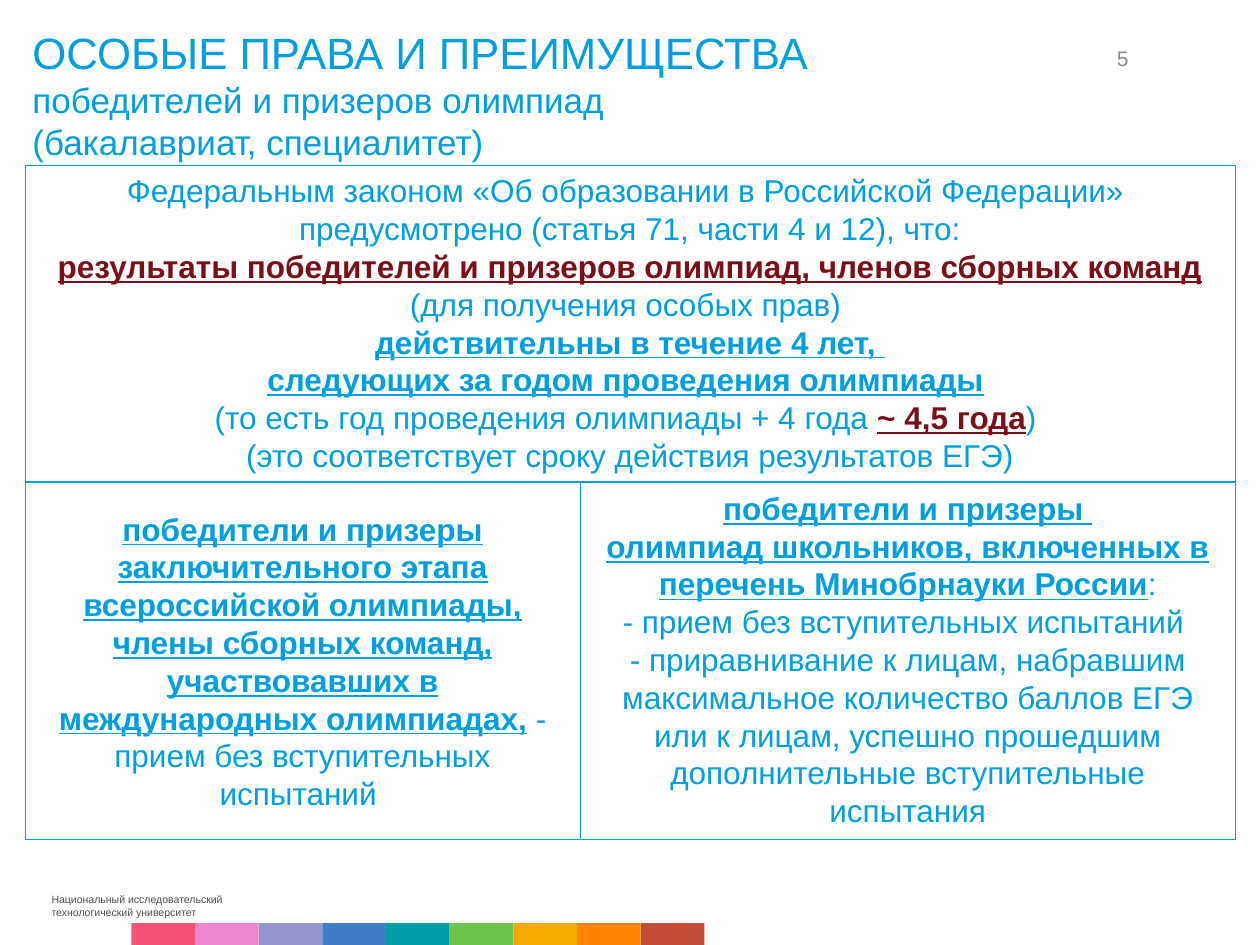
from pptx import Presentation
from pptx.dml.color import RGBColor as Rgb
from pptx.enum.shapes import MSO_SHAPE as Form
from pptx.enum.text import MSO_ANCHOR as Anchor, MSO_AUTO_SIZE as Auto, PP_ALIGN as Align
from pptx.util import Cm, Pt

HUES = {"blue": "009FDF", "wine": "7B0F19", "gray": "898989", "dark": "4C4C4C", "white": "FFFFFF"}
BANDS = ["F65275", "EC86D0", "9595D2", "407EC9", "009CA6", "6CC24A", "F2A900", "FF8200", "C04C36"]
TITLE = [("ОСОБЫЕ ПРАВА И ПРЕИМУЩЕСТВА", 25), ("победителей и призеров олимпиад", 20),
         ("(бакалавриат, специалитет)", 20)]
FOOTER = ["Национальный исследовательский", "технологический университет"]
KEY = {"bold": True, "underline": True}
WINE = {**KEY, "hue": "wine"}
LAW = [
    [("Федеральным законом «Об образовании в Российской Федерации» ", {})],
    [("предусмотрено (статья 71, части 4 и 12), что:", {})],
    [("результаты победителей и призеров олимпиад, членов сборных команд ", WINE),
     ("(для получения особых прав) ", {})],
    [("действительны в течение 4 лет, ", KEY)],
    [("следующих за годом проведения олимпиады", KEY), (" ", {})],
    [("(то есть год проведения олимпиады + 4 года ", {}), ("~ 4,5 года", WINE), (") ", {})],
    [("(это соответствует сроку действия результатов ЕГЭ)", {})],
]
FINAL = [
    [("победители и призеры заключительного этапа всероссийской олимпиады, члены сборных команд, "
      "участвовавших в международных олимпиадах,", KEY),
     (" - прием без вступительных испытаний ", {})],
]
SCHOOL = [
    [("победители и призеры ", KEY)],
    [("олимпиад школьников, включенных в перечень Минобрнауки России", KEY), (":", {})],
    [("- прием без вступительных испытаний ", {})],
    [("- приравнивание к лицам, набравшим максимальное количество баллов ЕГЭ или к лицам, "
      "успешно прошедшим дополнительные вступительные испытания", {})],
]
LEFT, WIDE, SPLIT = 0.5, 24.4, 11.2
TOP, MID, LOW = 3.33, 9.73, 7.18
PANELS = [
    (LAW, LEFT, TOP, WIDE, 6.37, Anchor.TOP),
    (FINAL, LEFT, MID, SPLIT, LOW, Anchor.MIDDLE),
    (SCHOOL, LEFT + SPLIT, MID, WIDE - SPLIT, LOW, Anchor.TOP),
]


def color(hue):
    """Return the colour for a name or hex string."""
    return Rgb.from_string(HUES.get(hue, hue))


def style(para, size, hue="blue", align=Align.LEFT):
    """Format one paragraph."""
    para.alignment, para.line_spacing = align, 1.0
    para.space_before = Pt(0)
    para.font.name, para.font.size = "Arial", Pt(size)
    para.font.color.rgb = color(hue)


def rows(frame, count):
    """Return the first paragraph and as many new ones as needed."""
    return [frame.paragraphs[0]] + [frame.add_paragraph() for _ in range(count - 1)]


def block(slide, fill, *box):
    """Add a plain filled rectangle."""
    shape = slide.shapes.add_shape(Form.RECTANGLE, *map(Cm, box))
    shape.shadow.inherit = False
    shape.fill.solid()
    shape.fill.fore_color.rgb = color(fill)
    shape.line.fill.background()
    return shape


def panel(slide, text, x, y, w, h, anchor):
    """Add a bordered panel of rich text."""
    shape = block(slide, "white", x, y, w, h)
    shape.line.color.rgb = color("blue")
    shape.line.width = Pt(0.25)
    frame = shape.text_frame
    frame.word_wrap, frame.vertical_anchor = True, anchor
    for para, runs in zip(rows(frame, len(text)), text):
        style(para, 18, align=Align.CENTER)
        for words, look in runs:
            run = para.add_run()
            run.text = words
            run.font.bold = look.get("bold", False)
            run.font.underline = look.get("underline", False)
            if "hue" in look:
                run.font.color.rgb = color(look["hue"])


def label(slide, lines, box, pads, size, hue, align, wrap):
    """Add a small text box."""
    frame = slide.shapes.add_textbox(*map(Cm, box)).text_frame
    frame.word_wrap = wrap
    frame.margin_left, frame.margin_top, frame.margin_right, frame.margin_bottom = map(Cm, pads)
    for para, words in zip(rows(frame, len(lines)), lines):
        para.text = words
        style(para, size, hue, align)


def main():
    """Build the slide."""
    deck = Presentation()
    deck.slide_width, deck.slide_height = Cm(25.4), Cm(19.05)
    slide = deck.slides.add_slide(deck.slide_layouts[5])
    start, span = 2.65, 11.55
    pitch = span / len(BANDS)
    for i, hue in enumerate(BANDS):
        block(slide, hue, start + i * pitch, 18.61, pitch, 0.45)

    head = slide.shapes.title
    head.left, head.top, head.width, head.height = map(Cm, (0.4, 0.4, WIDE, 1.2))
    frame = head.text_frame
    frame.auto_size, frame.vertical_anchor, frame.word_wrap = Auto.NONE, Anchor.TOP, True
    for para, (words, size) in zip(rows(frame, len(TITLE)), TITLE):
        para.text = words
        style(para, size)

    label(slide, ["5"], (20.62, 0.91, 2.13, 0.91), (0, 0, 0, 0), 12, "gray", Align.RIGHT, True)
    for item in PANELS:
        panel(slide, *item)
    label(slide, FOOTER, (0.89, 17.91, 3.94, 0.71), (0.15, 0.1, 0.2, 0.1), 6, "dark", Align.LEFT, False)
    deck.save("out.pptx")


if __name__ == "__main__":
    main()
